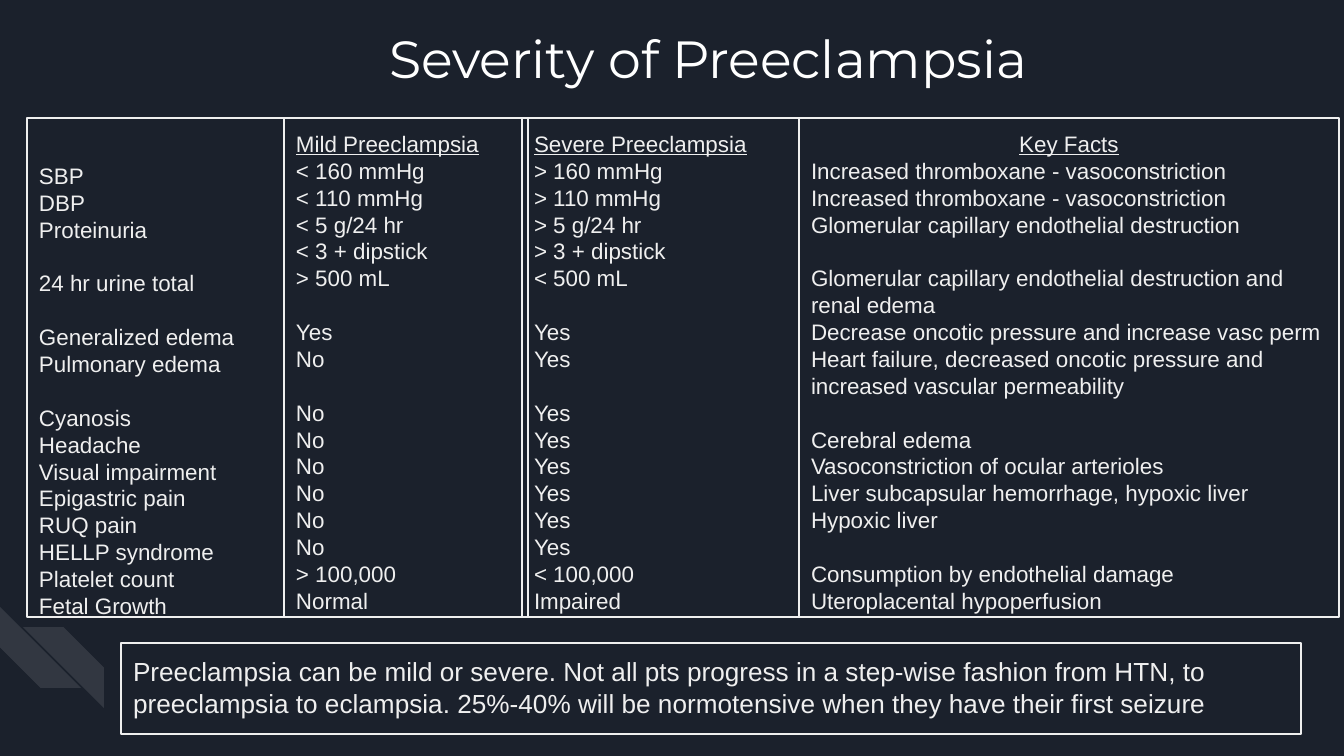
import pptx
import pptx.dml.color
import pptx.enum.shapes
import pptx.enum.text
import pptx.oxml.ns
import pptx.util
from lxml import etree

PX = 914400 / 134.4
SHAPES = pptx.enum.shapes.MSO_SHAPE
ALIGN = pptx.enum.text.PP_ALIGN
ANCHOR = pptx.enum.text.MSO_ANCHOR


def px(length):
    return pptx.util.Emu(round(length * PX))


def color(value):
    return pptx.dml.color.RGBColor.from_string(value)


class SlideBuilder:
    """Holds the style and the current slide, and adds each kind of element."""

    ground, white, ink = "1B212C", "FFFFFF", "EFEFEF"
    heading_font, body_font = "Montserrat", "Arial"
    inset = 12

    def __init__(self, deck):
        self.page = deck.slides.add_slide(deck.slide_layouts[5])
        self.page.background.fill.solid()
        self.page.background.fill.fore_color.rgb = color(self.ground)

    def frame(self, box, anchor, top_inset):
        frame = box.text_frame
        frame.word_wrap = True
        frame.auto_size = pptx.enum.text.MSO_AUTO_SIZE.NONE
        frame.vertical_anchor = anchor
        frame.margin_left = frame.margin_right = frame.margin_bottom = px(self.inset)
        frame.margin_top = px(top_inset)
        return frame

    def span(self, para, text, font, size, ink, underline=False):
        span = para.add_run()
        span.text = text
        span.font.name = font
        span.font.size = pptx.util.Pt(size)
        span.font.bold = False
        span.font.color.rgb = color(ink)
        if underline:
            span.font.underline = True

    def title(self, text, left, top, width, height):
        box = self.page.shapes.title
        box.left, box.top, box.width, box.height = map(px, (left, top, width, height))
        para = self.frame(box, ANCHOR.MIDDLE, self.inset).paragraphs[0]
        para.alignment = ALIGN.CENTER
        self.span(para, text, self.heading_font, 28, self.white)

    def stripe(self, left, top, size, rotation=0, flip=False):
        box = self.page.shapes.add_shape(SHAPES.DIAGONAL_STRIPE, *map(px, (left, top, size, size)))
        box.shadow.inherit = False
        box.rotation = rotation
        box.line.fill.background()
        box.fill.solid()
        box.fill.fore_color.rgb = color(self.white)
        tint = box.element.spPr.find(".//" + pptx.oxml.ns.qn("a:srgbClr"))
        etree.SubElement(tint, pptx.oxml.ns.qn("a:alpha")).set("val", "10000")
        if flip:
            box.element.spPr.find(pptx.oxml.ns.qn("a:xfrm")).set("flipH", "1")

    def panel(self, lines, left, top, width, height, heading=None,
              heading_align=ALIGN.LEFT, size=12, pitch=14.4, top_inset=inset):
        box = self.page.shapes.add_shape(SHAPES.RECTANGLE, *map(px, (left, top, width, height)))
        box.shadow.inherit = False
        box.fill.background()
        box.line.color.rgb = color(self.ink)
        box.line.width = pptx.util.Pt(0.75)
        frame = self.frame(box, ANCHOR.TOP, top_inset)
        para, gap = frame.paragraphs[0], 0
        for text in ([heading] if heading else []) + lines:
            if not text:
                gap += pitch
                continue
            if para.runs:
                para = frame.add_paragraph()
            is_heading = text == heading
            para.alignment = heading_align if is_heading else ALIGN.LEFT
            para.line_spacing = pptx.util.Pt(pitch)
            para.space_before = pptx.util.Pt(gap)
            self.span(para, text, self.body_font, size, self.ink, is_heading)
            gap = 0


SIGNS = ["SBP", "DBP", "Proteinuria", "", "24 hr urine total", "",
         "Generalized edema", "Pulmonary edema", "", "Cyanosis", "Headache",
         "Visual impairment", "Epigastric pain", "RUQ pain", "HELLP syndrome",
         "Platelet count", "Fetal Growth"]
MILD = ["< 160 mmHg", "< 110 mmHg", "< 5 g/24 hr", "< 3 + dipstick", "> 500 mL", "",
        "Yes", "No", "", *["No"] * 6, "> 100,000", "Normal"]
SEVERE = ["> 160 mmHg", "> 110 mmHg", "> 5 g/24 hr", "> 3 + dipstick", "< 500 mL", "",
          "Yes", "Yes", "", *["Yes"] * 6, "< 100,000", "Impaired"]
KEY_FACTS = ["Increased thromboxane - vasoconstriction",
             "Increased thromboxane - vasoconstriction",
             "Glomerular capillary endothelial destruction", "",
             "Glomerular capillary endothelial destruction and renal edema",
             "Decrease oncotic pressure and increase vasc perm",
             "Heart failure, decreased oncotic pressure and increased vascular permeability", "",
             "Cerebral edema", "Vasoconstriction of ocular arterioles",
             "Liver subcapsular hemorrhage, hypoxic liver", "Hypoxic liver", "",
             "Consumption by endothelial damage", "Uteroplacental hypoperfusion"]
SUMMARY = ("Preeclampsia can be mild or severe. Not all pts progress in a step-wise fashion "
           "from HTN, to preeclampsia to eclampsia. 25%-40% will be normotensive when they "
           "have their first seizure")


def main():
    deck = pptx.Presentation()
    deck.slide_width, deck.slide_height = px(1344), px(756)
    slide = SlideBuilder(deck)
    slide.stripe(0, 607, 81, rotation=270)
    slide.stripe(23, 627, 81, flip=True)
    slide.title("Severity of Preeclampsia", 191, 12, 1034, 92)
    top, height = 118, 499
    slide.panel(SIGNS, 27, top, 257, height, top_inset=44)
    slide.panel(SEVERE, 522, top, 277, height, "Severe Preeclampsia")
    slide.panel(MILD, 284, top, 244, height, "Mild Preeclampsia")
    slide.panel(KEY_FACTS, 799, top, 540, height, "Key Facts", ALIGN.CENTER)
    slide.panel([SUMMARY], 121, 643, 1180, 91, size=14, pitch=17)
    deck.save("out.pptx")


if __name__ == "__main__":
    main()
